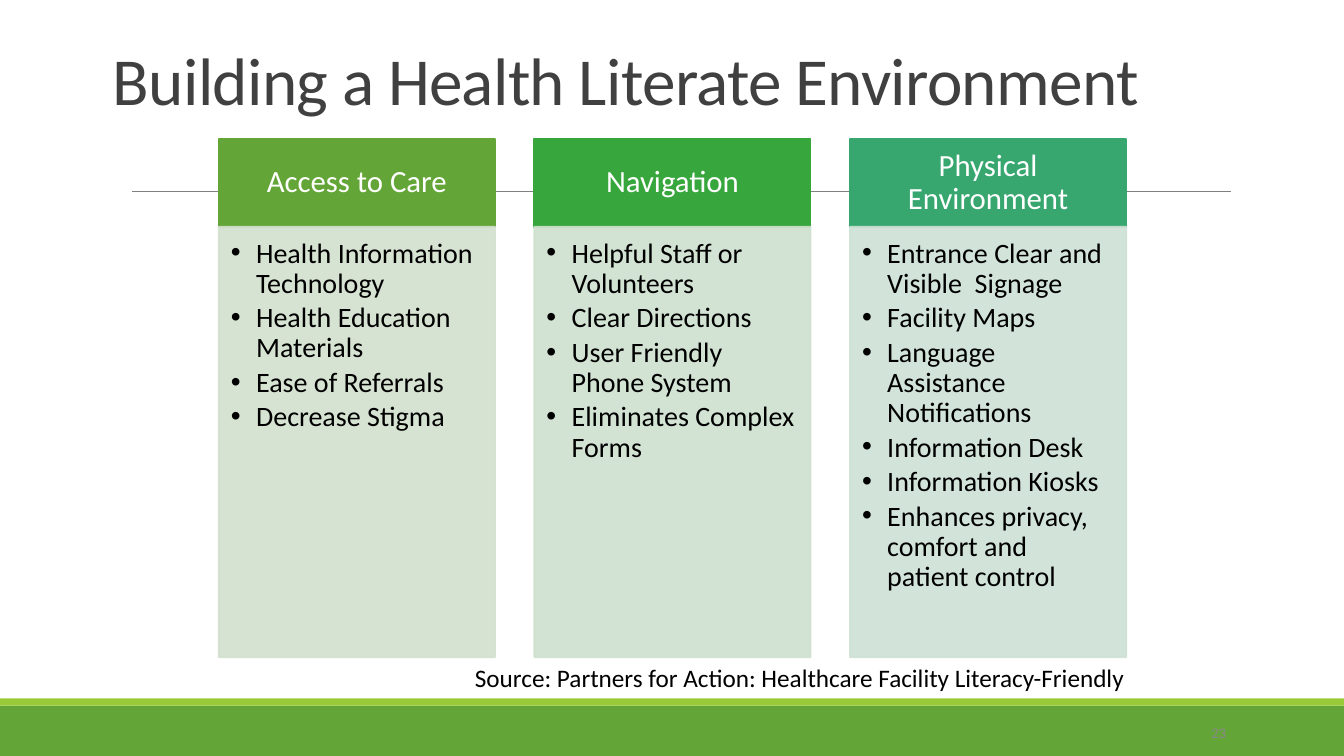
from lxml import etree
from pptx import Presentation
from pptx.dml.color import RGBColor
from pptx.enum import shapes, text
from pptx.oxml import ns
from pptx.util import Inches, Pt

COLORS = {
    "band": "63A537", "stripe": "99CB38", "rule": "808080",
    "title": "404040", "text": "000000", "header": "FFFFFF", "number": "898989",
}
COLUMNS = [
    ("Access to Care", "63A537", "D3E1CE", [
        "Health Information Technology", "Health Education Materials",
        "Ease of Referrals", "Decrease Stigma"]),
    ("Navigation", "37A63D", "CEE1CF", [
        "Helpful Staff or Volunteers", "Clear Directions",
        "User Friendly Phone System", "Eliminates Complex Forms"]),
    ("Physical Environment", "37A76F", "CEE1D5", [
        "Entrance Clear and Visible  Signage", "Facility Maps",
        "Language Assistance Notifications", "Information Desk",
        "Information Kiosks", "Enhances privacy, comfort and patient control"]),
]
COLUMN_LEFT, COLUMN_STEP, COLUMN_WIDTH = 2.17, 3.13, 2.74
HEADER_TOP, HEADER_HEIGHT, BODY_HEIGHT = 1.38, 0.87, 4.27


def rgb(color):
    return RGBColor.from_string(color)


def style(para, size, color, align=text.PP_ALIGN.LEFT, spacing=1.0, after=0):
    para.font.name = "Calibri"
    para.font.size = Pt(size)
    para.font.color.rgb = rgb(color)
    para.alignment = align
    para.line_spacing = spacing
    para.space_after = Pt(after)


def set_frame(frame, anchor, insets):
    frame.word_wrap = True
    frame.auto_size = text.MSO_AUTO_SIZE.NONE
    frame.vertical_anchor = anchor
    (frame.margin_left, frame.margin_top,
     frame.margin_right, frame.margin_bottom) = map(Inches, insets)


def add_box(page, place, color, outlined=False, alpha=None):
    box = page.shapes.add_shape(shapes.MSO_SHAPE.RECTANGLE, *map(Inches, place))
    box.shadow.inherit = False
    box.fill.solid()
    box.fill.fore_color.rgb = rgb(color)
    if outlined:
        box.line.color.rgb = rgb(color)
        box.line.width = Pt(1.25)
    else:
        box.line.fill.background()
    if alpha:
        for tint in box._element.spPr.iter(ns.qn("a:srgbClr")):
            etree.SubElement(tint, ns.qn("a:alpha"), val=str(alpha * 1000))
    return box


def add_rule(page, left, right, top):
    rule = page.shapes.add_connector(
        shapes.MSO_CONNECTOR.STRAIGHT, *map(Inches, (left, top, right, top)))
    rule.line.color.rgb = rgb(COLORS["rule"])
    rule.line.width = Pt(0.5)
    etree.SubElement(rule._element.spPr, ns.qn("a:effectLst"))


def add_label(page, place, words, size, color):
    """Add one right-aligned line of text."""
    label = page.shapes.add_textbox(*map(Inches, place))
    set_frame(label.text_frame, text.MSO_ANCHOR.TOP, (0.1, 0.05, 0.1, 0.05))
    label.text_frame.text = words
    style(label.text_frame.paragraphs[0], size, color, text.PP_ALIGN.RIGHT)


def add_bullet(para):
    props = para._p.get_or_add_pPr()
    props.set("marL", str(Inches(0.25)))
    props.set("indent", str(-Inches(0.25)))
    etree.SubElement(props, ns.qn("a:buFont"), typeface="Arial")
    etree.SubElement(props, ns.qn("a:buChar"), char="•")


def add_column(page, left, heading, header_color, body_color, items):
    header = add_box(page, (left, HEADER_TOP, COLUMN_WIDTH, HEADER_HEIGHT),
                     header_color, outlined=True)
    set_frame(header.text_frame, text.MSO_ANCHOR.MIDDLE, (0.17, 0.1, 0.17, 0.1))
    header.text_frame.text = heading
    style(header.text_frame.paragraphs[0], 22, COLORS["header"],
          text.PP_ALIGN.CENTER, 0.9)

    body = add_box(page, (left, HEADER_TOP + HEADER_HEIGHT, COLUMN_WIDTH, BODY_HEIGHT),
                   body_color, outlined=True, alpha=90)
    set_frame(body.text_frame, text.MSO_ANCHOR.TOP, (0.12, 0.12, 0.16, 0.17))
    body.text_frame.text = "\n".join(items)
    for para in body.text_frame.paragraphs:
        style(para, 20, COLORS["text"], spacing=0.9, after=3)
        add_bullet(para)


def set_title(page, words):
    title = page.shapes.title
    title.left, title.top, title.width, title.height = map(
        Inches, (1.02, 0.31, 11.18, 0.92))
    set_frame(title.text_frame, text.MSO_ANCHOR.BOTTOM, (0.1, 0.05, 0.1, 0.05))
    title.text_frame.text = words
    para = title.text_frame.paragraphs[0]
    style(para, 48, COLORS["title"], spacing=0.85)
    para.runs[0].font._element.set("spc", "-50")


def main():
    deck = Presentation()
    deck.slide_width, deck.slide_height = Inches(13.33), Inches(7.5)
    page = deck.slides.add_slide(deck.slide_layouts.get_by_name("Title Only"))

    add_box(page, (0, 7, 13.33, 0.5), COLORS["band"])
    add_box(page, (0, 6.93, 13.33, 0.07), COLORS["stripe"])
    add_rule(page, 1.31, 12.21, 1.9)
    set_title(page, "Building a Health Literate Environment")
    add_label(page, (3.76, 6.52, 7.49, 0.4),
              "Source: Partners for Action: Healthcare Facility Literacy-Friendly",
              18, COLORS["text"])
    for index, column in enumerate(COLUMNS):
        add_column(page, COLUMN_LEFT + index * COLUMN_STEP, *column)
    add_label(page, (10.83, 7.13, 1.43, 0.3), "23", 10.5, COLORS["number"])
    deck.save("out.pptx")


if __name__ == "__main__":
    main()
